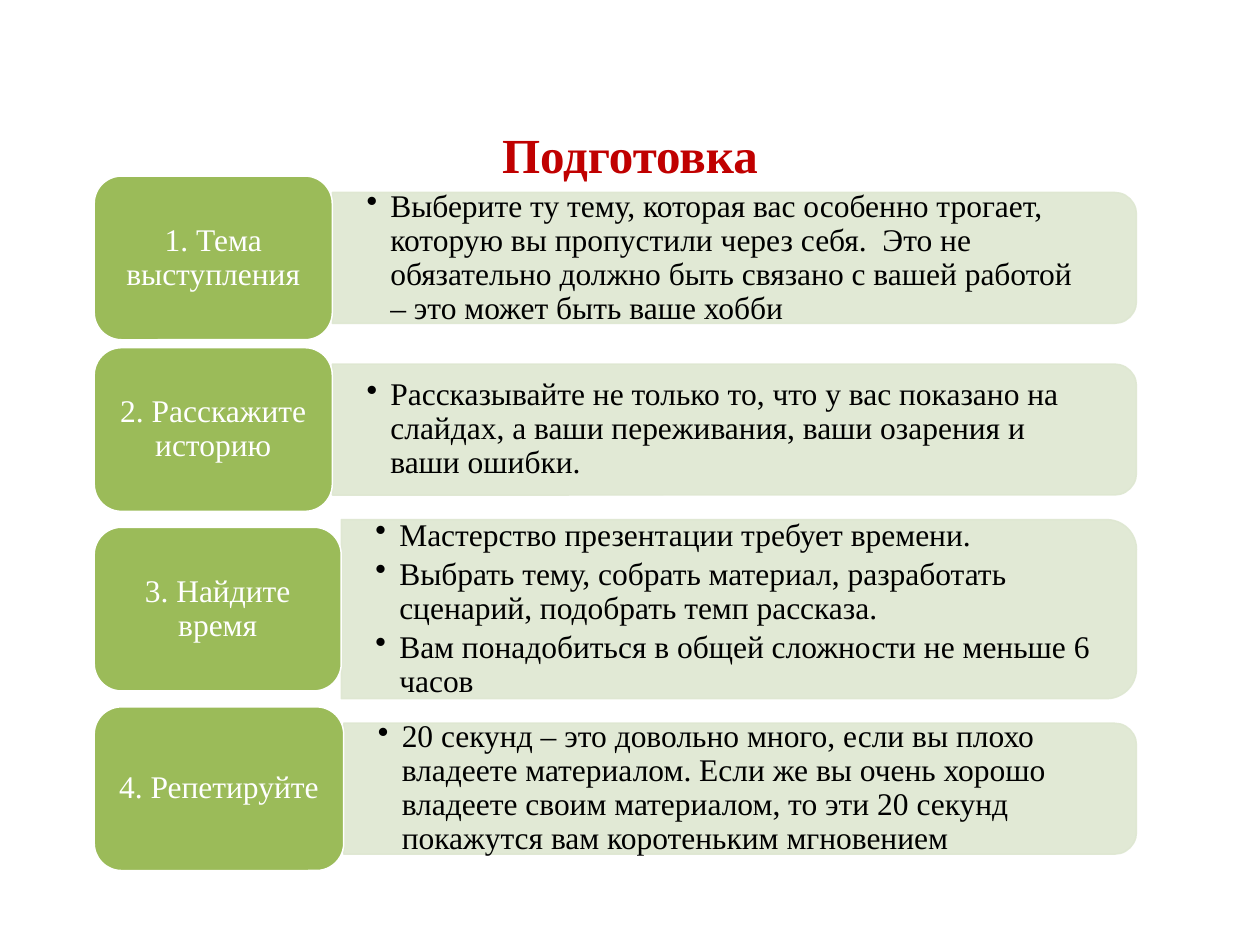
from dataclasses import dataclass

from lxml.etree import SubElement
from pptx import Presentation
from pptx.dml.color import RGBColor
from pptx.enum.shapes import MSO_SHAPE
from pptx.enum.text import MSO_ANCHOR, PP_ALIGN
from pptx.oxml.ns import qn
from pptx.util import Cm, Pt


@dataclass(frozen=True)
class Theme:
    """Colours, font and type sizes of the slide."""
    font: str = "Times New Roman"
    title: str = "C00000"
    label: str = "9BBB59"
    panel: str = "DEE7D1"
    light: str = "FFFFFF"
    dark: str = "000000"
    title_size: float = 28
    body_size: float = 18
    line_width: float = 0.85
    panel_opacity: int = 90


class SlideBuilder:
    """Draws styled elements on the current slide."""

    def __init__(self, slide, theme):
        self.slide = slide
        self.theme = theme

    def set_values(self, target, values):
        """Set each attribute in the dict on the target."""
        for name, value in values.items():
            setattr(target, name, value)

    def set_frame(self, shape, horizontal, vertical):
        """Wrap and centre the text vertically within the given insets."""
        self.set_values(shape.text_frame, {
            "word_wrap": True, "vertical_anchor": MSO_ANCHOR.MIDDLE,
            "margin_left": Cm(horizontal), "margin_right": Cm(horizontal),
            "margin_top": Cm(vertical), "margin_bottom": Cm(vertical)})

    def set_font(self, paragraph, size, color, bold=False):
        """Apply the theme font to a paragraph."""
        self.set_values(paragraph.font, {
            "name": self.theme.font, "size": Pt(size), "bold": bold})
        paragraph.font.color.rgb = RGBColor.from_string(color)

    def shape(self, kind, left, top, width, height, fill, line):
        """Add a filled and outlined preset shape."""
        shape = self.slide.shapes.add_shape(kind, Cm(left), Cm(top), Cm(width), Cm(height))
        shape.shadow.inherit = False
        shape.fill.solid()
        shape.fill.fore_color.rgb = RGBColor.from_string(fill)
        shape.line.color.rgb = RGBColor.from_string(line)
        shape.line.width = Pt(self.theme.line_width)
        return shape

    def title(self, text, left, top, width, height):
        """Add the centred slide title."""
        box = self.slide.shapes.add_textbox(Cm(left), Cm(top), Cm(width), Cm(height))
        self.set_frame(box, 0.25, 0.13)
        paragraph = box.text_frame.paragraphs[0]
        self.set_values(paragraph, {"text": text, "alignment": PP_ALIGN.CENTER})
        self.set_font(paragraph, self.theme.title_size, self.theme.title, bold=True)

    def panel(self, left, center, width, height):
        """Add a translucent panel rounded on its right side."""
        panel = self.shape(MSO_SHAPE.ROUND_2_SAME_RECTANGLE,
                           left + (width - height) / 2, center - width / 2,
                           height, width, self.theme.panel, self.theme.panel)
        panel.rotation = 90
        for color in panel._element.spPr.iter(qn("a:srgbClr")):
            SubElement(color, qn("a:alpha"), val=str(self.theme.panel_opacity * 1000))

    def bullets(self, texts, left, center, width, height):
        """Add a bulleted text box centred on the row."""
        box = self.slide.shapes.add_textbox(
            Cm(left), Cm(center - height / 2), Cm(width), Cm(height))
        self.set_frame(box, 0.69, 0.36)
        frame = box.text_frame
        for index, text in enumerate(texts):
            paragraph = frame.add_paragraph() if index else frame.paragraphs[0]
            self.set_values(paragraph, {
                "text": text, "level": 1, "line_spacing": 0.9, "space_after": Pt(2.7)})
            properties = paragraph._p.get_or_add_pPr()
            properties.set("marL", str(Cm(0.48)))
            properties.set("indent", str(-Cm(0.48)))
            SubElement(properties, qn("a:buChar"), char="•")
            self.set_font(paragraph, self.theme.body_size, self.theme.dark)

    def label(self, text, left, center, width, height):
        """Add a rounded step label."""
        label = self.shape(MSO_SHAPE.ROUNDED_RECTANGLE, left, center - height / 2,
                           width, height, self.theme.label, self.theme.light)
        self.set_frame(label, 0.33, 0.25)
        paragraph = label.text_frame.paragraphs[0]
        self.set_values(paragraph, {
            "text": text, "alignment": PP_ALIGN.CENTER, "line_spacing": 0.9})
        self.set_font(paragraph, self.theme.body_size, self.theme.light)


LABEL_LEFT, LABEL_HEIGHT = 1.9, 3.3
PANEL_RIGHT, TEXT_RIGHT = 22.91, 22.77
STEPS = [
    ("1. Тема выступления", 5.2, 4.8, 2.64, [
        "Выберите ту тему, которая вас особенно трогает, которую вы пропустили через себя.  "
        "Это не обязательно должно быть связано с вашей работой – это может быть ваше хобби"]),
    ("2. Расскажите историю", 8.66, 4.8, 2.64, [
        "Рассказывайте не только то, что у вас показано на слайдах, а ваши переживания, "
        "ваши озарения и  ваши ошибки."]),
    ("3. Найдите время", 12.28, 4.98, 3.61, [
        "Мастерство презентации требует времени.",
        "Выбрать тему, собрать материал, разработать сценарий, подобрать темп рассказа.",
        "Вам понадобиться в общей сложности не меньше 6 часов"]),
    ("4. Репетируйте", 15.9, 5.03, 2.64, [
        "20 секунд – это довольно много, если вы плохо владеете материалом. "
        "Если же вы очень хорошо владеете своим материалом, то эти 20 секунд "
        "покажутся вам коротеньким мгновением"]),
]


def main():
    """Build and save the slide."""
    presentation = Presentation()
    presentation.slide_width, presentation.slide_height = Cm(25.4), Cm(19.05)
    slide = presentation.slides.add_slide(presentation.slide_layouts[6])
    builder = SlideBuilder(slide, Theme())
    builder.title("Подготовка", 3.81, 2.51, 17.78, 1.2)
    for name, center, label_width, panel_height, texts in STEPS:
        left = LABEL_LEFT + label_width
        builder.panel(left, center, PANEL_RIGHT - left, panel_height)
        builder.bullets(texts, left, center, TEXT_RIGHT - left, panel_height - 0.25)
        builder.label(name, LABEL_LEFT, center, label_width, LABEL_HEIGHT)
    presentation.save("out.pptx")


if __name__ == "__main__":
    main()
